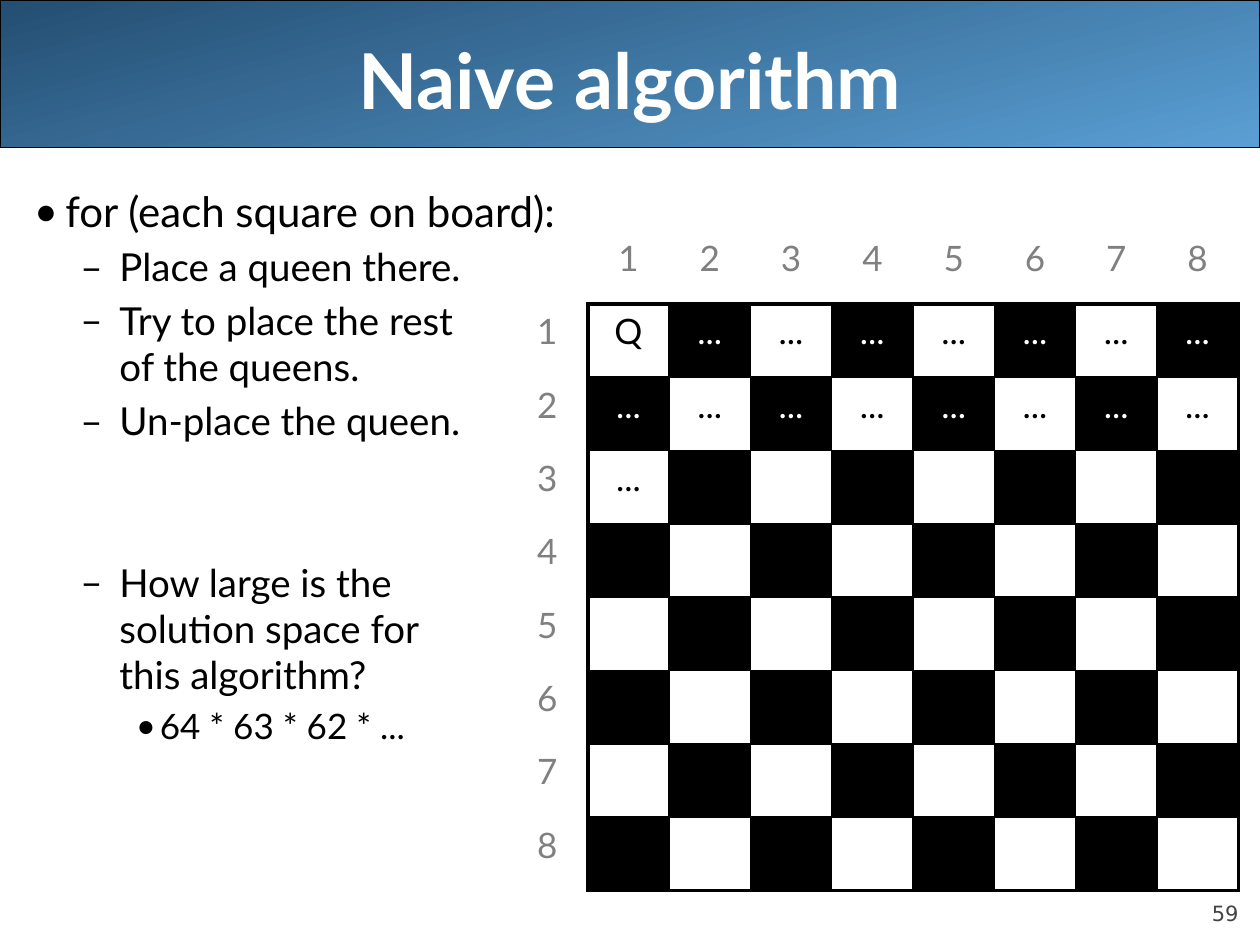
from lxml import etree
from pptx import Presentation
from pptx.dml.color import RGBColor
from pptx.enum.shapes import MSO_SHAPE
from pptx.enum.text import MSO_ANCHOR, PP_ALIGN
from pptx.oxml.ns import qn
from pptx.util import Inches, Pt

ROUND = MSO_SHAPE.ROUNDED_RECTANGLE
MID, LOW = MSO_ANCHOR.MIDDLE, MSO_ANCHOR.BOTTOM
CENTER, RIGHT = PP_ALIGN.CENTER, PP_ALIGN.RIGHT
BLACK = RGBColor(0x00, 0x00, 0x00)
WHITE = RGBColor(0xFF, 0xFF, 0xFF)
GRAY = RGBColor(0x80, 0x80, 0x80)
DARK = RGBColor(0x42, 0x42, 0x42)
NAVY = RGBColor(0x24, 0x4E, 0x72)
SKY = RGBColor(0x5A, 0x9F, 0xD4)
FONT = "Lato"
NO_STYLE = "{2D5ABB26-0587-4C30-8999-92F81FD0307C}"

# Content
TITLE = "Naive algorithm"
PAGE = "59"
STEPS = [  # level, space before in points, lines
    (0, 0, ["for (each square on board):"]),
    (1, 4.4, ["Place a queen there."]),
    (1, 4.4, ["Try to place the rest", "of the queens."]),
    (1, 4.4, ["Un-place the queen."]),
    (1, 66, ["How large is the", "solution space for", "this algorithm?"]),
    (2, 4, ["64 * 63 * 62 * ..."]),
]
LEVELS = [  # bullet, size, left margin, indent
    ("•", 24, 0.25, -0.25),
    ("–", 22, 0.68, -0.31),
    ("•", 20, 1, -0.19),
]
SIZE = 8
MARKS = [["Q"] + ["..."] * 7, ["..."] * 8, ["..."]]
LEFT, TOP, WIDE, HIGH = 4.02, 1.83, 5.81, 5.24
THICK, THIN = 2.25, 1


def add_run(para, text, size, color, font=FONT, bold=False):
    run = para.add_run()
    run.text = text
    run.font.size = Pt(size)
    run.font.name = font
    run.font.bold = bold
    run.font.color.rgb = color


def add_bullet(para, mark, left, indent):
    props = para._p.get_or_add_pPr()
    props.set("marL", str(Inches(left)))
    props.set("indent", str(Inches(indent)))
    etree.SubElement(props, qn("a:buFont")).set("typeface", FONT)
    etree.SubElement(props, qn("a:buChar")).set("char", mark)


def set_edges(cell, edges):
    props = cell._tc.get_or_add_tcPr()
    for spot, side in enumerate("LRTB"):
        width = edges.get(side, 0)
        line = etree.Element(qn("a:ln" + side), w=str(Pt(width)))
        if width:
            fill = etree.SubElement(line, qn("a:solidFill"))
            etree.SubElement(fill, qn("a:srgbClr")).set("val", str(BLACK))
        else:
            etree.SubElement(line, qn("a:noFill"))
        props.insert(spot, line)


def cell_edges(row, col):
    if row == 0:
        return {"B": THICK} if col else {}
    if col == 0:
        return {"R": THICK}
    return {
        "L": THICK if col == 1 else THIN,
        "R": THICK if col == SIZE else THIN,
        "T": THICK if row == 1 else THIN,
        "B": THICK if row == SIZE else THIN,
    }


def cell_text(row, col):
    if row == 0 or col == 0:
        return str(row + col) if row + col else ""
    marks = MARKS[row - 1] if row <= len(MARKS) else []
    return marks[col - 1] if col <= len(marks) else ""


def add_banner(slide):
    banner = slide.shapes.add_shape(ROUND, 0, 0, Inches(10), Inches(1.17))
    banner.adjustments[0] = 0
    banner.shadow.inherit = False
    banner.fill.gradient()
    banner.fill.gradient_angle = 285
    for stop, color in zip(banner.fill.gradient_stops, (NAVY, SKY)):
        stop.color.rgb = color
    banner.line.color.rgb = BLACK
    banner.line.width = Pt(0.75)
    slide.shapes._spTree.insert(2, banner._element)  # behind the title


def add_title(slide):
    title = slide.shapes.title
    title.left, title.top = Inches(0.5), 0
    title.width, title.height = Inches(9), Inches(1.25)
    title.text_frame.vertical_anchor = MID
    para = title.text_frame.paragraphs[0]
    para.alignment = CENTER
    add_run(para, TITLE, 44, WHITE, bold=True)


def add_page(slide):
    box = slide.shapes.add_textbox(Inches(9), Inches(6.95), Inches(0.83), Inches(0.4))
    frame = box.text_frame
    frame.word_wrap = True
    frame.vertical_anchor = LOW
    frame.margin_left = frame.margin_right = 0
    frame.margin_top = frame.margin_bottom = 0
    para = frame.paragraphs[0]
    para.alignment = RIGHT
    add_run(para, PAGE, 12, DARK, "DejaVu Sans")


def add_steps(slide):
    box = slide.shapes.add_textbox(Inches(0.17), Inches(1.42), Inches(9.83), Inches(5.67))
    frame = box.text_frame
    frame.word_wrap = True
    for i, (level, space, lines) in enumerate(STEPS):
        para = frame.add_paragraph() if i else frame.paragraphs[0]
        mark, size, left, indent = LEVELS[level]
        para.level = level
        para.space_before = Pt(space)
        add_bullet(para, mark, left, indent)
        for j, text in enumerate(lines):
            if j:
                para.add_line_break()
            add_run(para, text, size, BLACK)


def add_board(slide):
    count = SIZE + 1
    board = slide.shapes.add_table(
        count, count, Inches(LEFT), Inches(TOP), Inches(WIDE), Inches(HIGH)
    ).table
    board.first_row = board.horz_banding = False
    board._tbl.tblPr.find(qn("a:tableStyleId")).text = NO_STYLE
    for col in board.columns:
        col.width = Inches(WIDE / count)
    for row in board.rows:
        row.height = Inches(HIGH / count)

    for row in range(count):
        for col in range(count):
            cell = board.cell(row, col)
            label = row == 0 or col == 0
            black = not label and (row + col) % 2 == 1
            if black:
                cell.fill.solid()
                cell.fill.fore_color.rgb = BLACK
            else:
                cell.fill.background()
            set_edges(cell, cell_edges(row, col))
            text = cell_text(row, col)
            if text:
                para = cell.text_frame.paragraphs[0]
                para.alignment = CENTER
                color = GRAY if label else WHITE if black else BLACK
                add_run(para, text, 20, color)


def main():
    deck = Presentation()
    deck.slide_width, deck.slide_height = Inches(10), Inches(7.5)
    slide = deck.slides.add_slide(deck.slide_layouts[5])
    add_banner(slide)
    add_title(slide)
    add_page(slide)
    add_steps(slide)
    add_board(slide)
    deck.save("out.pptx")


if __name__ == "__main__":
    main()
